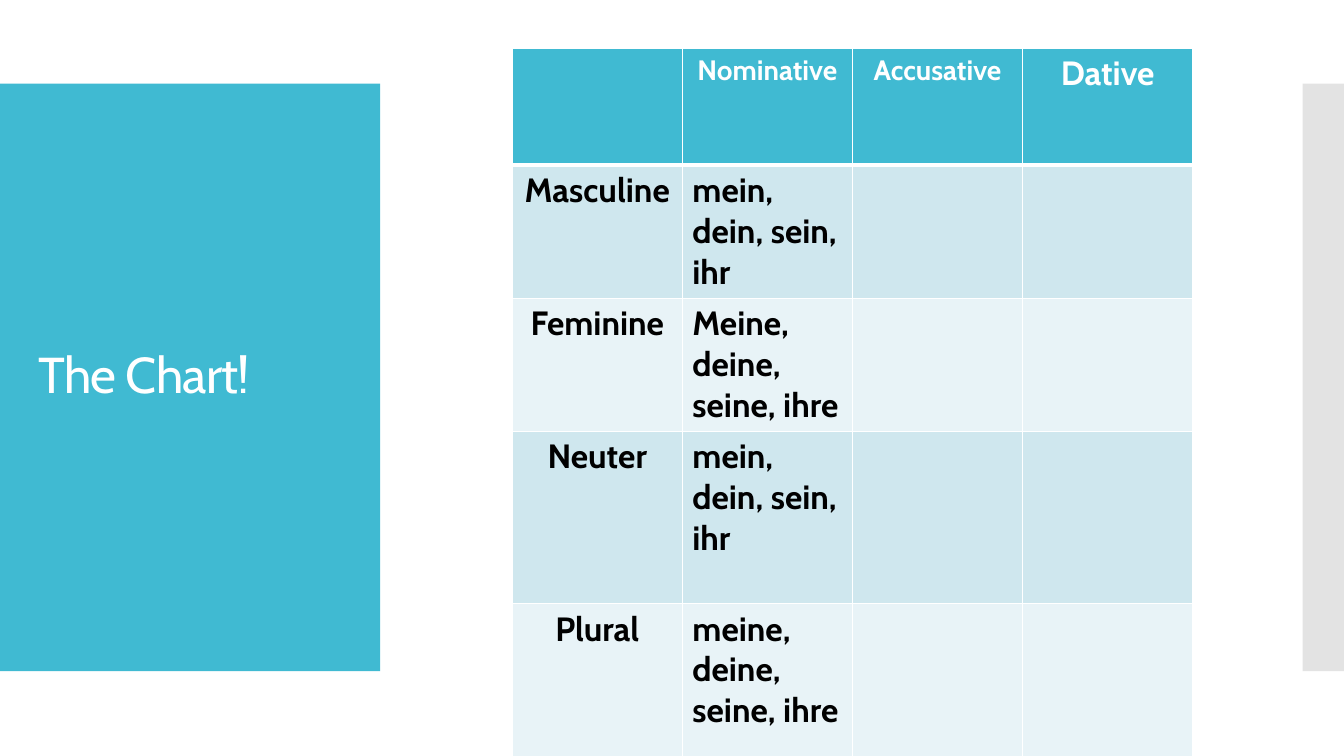
"""Build a slide with a German possessive pronoun chart beside a title panel."""
from lxml.etree import SubElement
from pptx import Presentation
from pptx.dml.color import RGBColor
from pptx.enum.shapes import MSO_SHAPE as Shape
from pptx.enum.text import MSO_ANCHOR as Anchor, MSO_AUTO_SIZE as AutoSize, PP_ALIGN as Align
from pptx.oxml.ns import qn
from pptx.util import Inches, Pt

THEME = {
    "font": "Cabin",
    "accent": "40BAD2",
    "side": "C8C8C8",
    "white": "FFFFFF",
    "black": "000000",
    "bands": ["CFE7EE", "E8F3F7"],
    "title": 36,
    "body": 24,
    "small": 20,
}


def style_text(paragraph, size, color, bold, alignment):
    paragraph.alignment = alignment
    values = {"name": THEME["font"], "size": Pt(size), "bold": bold}
    for name, value in values.items():
        setattr(paragraph.font, name, value)
    paragraph.font.color.rgb = RGBColor.from_string(color)


def add_borders(cell, widths):
    properties = cell._tc.get_or_add_tcPr()
    for position, (side, width) in enumerate(widths.items()):
        line = properties.makeelement(qn(f"a:{side}"), {"w": str(Pt(width))})
        fill = SubElement(line, qn("a:solidFill"))
        SubElement(fill, qn("a:srgbClr"), val=THEME["white"])
        properties.insert(position, line)


presentation = Presentation()
presentation.slide_width = Inches(13.33)
presentation.slide_height = Inches(7.5)
slide = presentation.slides.add_slide(presentation.slide_layouts[5])
title = slide.shapes.title

panels = [(0, 3.77, THEME["accent"], None), (12.92, 0.41, THEME["side"], 50)]
for left, width, color, opacity in panels:
    panel = slide.shapes.add_shape(
        Shape.RECTANGLE, Inches(left), Inches(0.83), Inches(width), Inches(5.83))
    panel.shadow.inherit = False
    panel.line.fill.background()
    panel.fill.solid()
    panel.fill.fore_color.rgb = RGBColor.from_string(color)
    if opacity:
        panel_color = panel._element.spPr.find(f".//{qn('a:srgbClr')}")
        SubElement(panel_color, qn("a:alpha"), val=str(opacity * 1000))

slide.shapes._spTree.append(title._element)
title_box = {"left": 0.28, "top": 1.23, "width": 3.22, "height": 5.03}
for name, value in title_box.items():
    setattr(title, name, Inches(value))
title.text_frame.text = "The Chart!"
title_format = {"word_wrap": True, "auto_size": AutoSize.NONE, "vertical_anchor": Anchor.MIDDLE}
for name, value in title_format.items():
    setattr(title.text_frame, name, value)
title_paragraph = title.text_frame.paragraphs[0]
title_paragraph.line_spacing = 0.9
style_text(title_paragraph, THEME["title"], THEME["white"], False, Align.LEFT)
title_paragraph.runs[0]._r.get_or_add_rPr().set("spc", "-60")

rows = [
    ["", "Nominative", "Accusative", "Dative"],
    ["Masculine", "mein, dein, sein, ihr", "", ""],
    ["Feminine", "Meine, deine, seine, ihre", "", ""],
    ["Neuter", "mein, dein, sein, ihr", "", ""],
    ["Plural", "meine, deine, seine, ihre", "", ""],
]
row_heights = [1.16, 1.32, 1.32, 1.71, 1.65]
header_sizes = [THEME["body"], THEME["small"], THEME["small"], THEME["body"]]

table = slide.shapes.add_table(
    len(rows), len(rows[0]), Inches(5.08), Inches(0.48), Inches(6.75), Inches(7.16)).table
table.horz_banding = False
for column in table.columns:
    column.width = Inches(6.75 / len(rows[0]))

for row_index, words in enumerate(rows):
    table.rows[row_index].height = Inches(row_heights[row_index])
    is_header = row_index == 0
    fill = THEME["accent"] if is_header else THEME["bands"][(row_index - 1) % 2]
    text_color = THEME["white"] if is_header else THEME["black"]
    for column_index, word in enumerate(words):
        cell = table.cell(row_index, column_index)
        cell.fill.solid()
        cell.fill.fore_color.rgb = RGBColor.from_string(fill)
        top = 3 if row_index == 1 else 1
        bottom = 3 if is_header else 1
        add_borders(cell, {"lnL": 1, "lnR": 1, "lnT": top, "lnB": bottom})
        if word:
            cell.text = word
            size = header_sizes[column_index] if is_header else THEME["body"]
            alignment = Align.CENTER if is_header or column_index == 0 else Align.LEFT
            style_text(cell.text_frame.paragraphs[0], size, text_color, True, alignment)

presentation.save("out.pptx")
